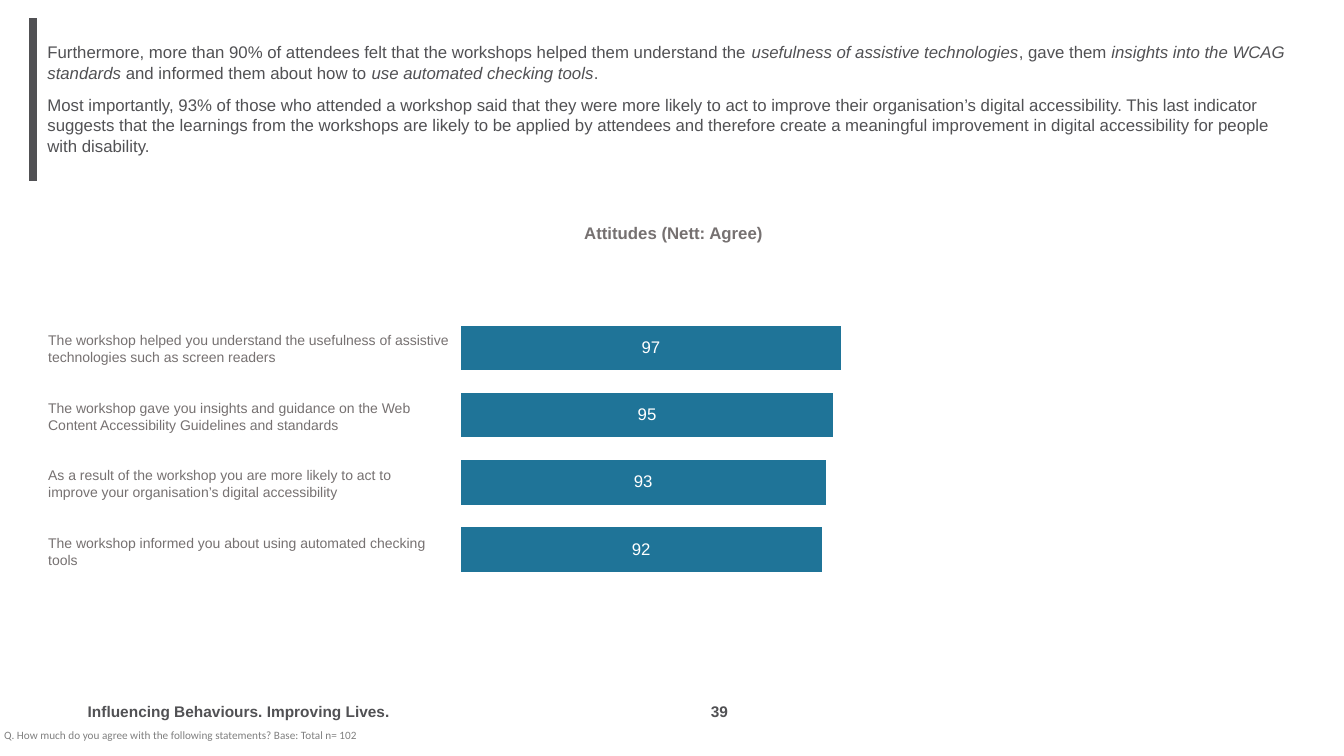
from lxml import etree
from pptx import Presentation
from pptx import util as u
from pptx.chart import data
from pptx.dml.color import RGBColor
from pptx.enum import chart as ch, text as tx
from pptx.oxml import parse_xml
from pptx.oxml.ns import nsdecls, qn

INK, GREY, BLUE = "515154", "767171", "1F7498"
INTRO = [
    "Furthermore, more than 90% of attendees felt that the workshops helped them understand the "
    "*usefulness of assistive technologies*, gave them *insights into the WCAG standards* and "
    "informed them about how to *use automated checking tools*.",
    "Most importantly, 93% of those who attended a workshop said that they were more likely to act "
    "to improve their organisation’s digital accessibility. This last indicator suggests that the "
    "learnings from the workshops are likely to be applied by attendees and therefore create a "
    "meaningful improvement in digital accessibility for people with disability.",
]
ROWS = [
    ("The workshop helped you understand the usefulness of assistive technologies such as "
     "screen readers", 97, 4.51),
    ("The workshop gave you insights and guidance on the Web Content Accessibility Guidelines "
     "and standards", 95, 4.06),
    ("As a result of the workshop you are more likely to act to improve your organisation’s "
     "digital accessibility", 93, 4.06),
    ("The workshop informed you about using automated checking tools", 92, 4.06),
]


def rgb(hue):
    """Turn a hex string into a colour."""
    return RGBColor.from_string(hue)


def put(obj, vals):
    """Set each attribute in a dict of values."""
    for key, val in vals.items():
        setattr(obj, key, val)


def style(font, size, hue, **more):
    """Set size, colour and other traits of a font."""
    put(font, {"name": "Arial", "size": u.Pt(size), **more})
    font.color.rgb = rgb(hue)


def place(shape, left, top, width, height):
    """Move and size a shape, in inches."""
    spots = zip(("left", "top", "width", "height"), (left, top, width, height))
    put(shape, {key: u.Inches(val) for key, val in spots})


def write(shape, lines, size, hue, form=None, inset=None, anchor=tx.MSO_ANCHOR.MIDDLE, **more):
    """Fill a shape with paragraphs; starred parts are italic."""
    frame = shape.text_frame
    put(frame, {"word_wrap": True, "auto_size": tx.MSO_AUTO_SIZE.NONE, "vertical_anchor": anchor})
    if inset is not None:
        sides = ("left", "top", "right", "bottom")
        put(frame, {f"margin_{side}": u.Inches(inset) for side in sides})
    for num, line in enumerate(lines):
        para = frame.add_paragraph() if num else frame.paragraphs[0]
        put(para, {"space_before": u.Pt(0), **(form or {})})
        for odd, part in enumerate(line.split("*")):
            run = para.add_run()
            run.text = part
            style(run.font, size, hue, italic=bool(odd % 2), **more)


def label(slide, box, line, size, hue, **more):
    """Add a text box with one paragraph."""
    shape = slide.shapes.add_textbox(*map(u.Inches, box))
    write(shape, [line], size, hue, **more)


def plain(shape):
    """Take the bullets and indents off a list."""
    for para in shape.text_frame.paragraphs:
        props = para._p.get_or_add_pPr()
        put(props, {"marL": 0, "indent": 0}) if hasattr(props, "marL") else None
        props.set("marL", "0")
        props.set("indent", "0")
        etree.SubElement(props, qn("a:buNone"))


def rule(slide, start, end, hue, width):
    """Draw a straight line."""
    line = slide.shapes.add_connector(1, *map(u.Inches, start + end))
    line.line.color.rgb = rgb(hue)
    line.line.width = u.Pt(width)
    etree.SubElement(line._element.spPr, qn("a:effectLst"))


def frame_plot(chart, **spot):
    """Fix the inner plot area as parts of the chart."""
    area = chart._chartSpace.chart.plotArea
    for old in area.findall(qn("c:layout")):
        area.remove(old)
    modes = '<c:xMode val="edge"/><c:yMode val="edge"/>'
    sizes = "".join(f'<c:{key} val="{val}"/>' for key, val in spot.items())
    area.insert(0, parse_xml(
        f'<c:layout {nsdecls("c")}><c:manualLayout><c:layoutTarget val="inner"/>'
        f"{modes}{sizes}</c:manualLayout></c:layout>"))


def bars(slide, box, vals):
    """Add the bar chart of agreement."""
    feed = data.CategoryChartData()
    feed.categories = [str(num + 1) for num in range(len(vals))]
    feed.add_series("Series 1", vals)
    kind = ch.XL_CHART_TYPE.BAR_STACKED
    chart = slide.shapes.add_chart(kind, *map(u.Inches, box), feed).chart
    put(chart, {"has_legend": False, "has_title": False})
    style(chart.font, 10, INK)
    put(chart.category_axis, {"reverse_order": True, "visible": False})
    put(chart.value_axis, {"minimum_scale": -100, "maximum_scale": 100,
                           "has_major_gridlines": False, "visible": False})
    plot = chart.plots[0]
    put(plot, {"gap_width": 50, "overlap": 100, "vary_by_categories": False})
    fill = plot.series[0].format.fill
    fill.solid()
    fill.fore_color.rgb = rgb(BLUE)
    tags = plot.series[0].data_labels
    put(tags, {"show_value": True, "position": ch.XL_LABEL_POSITION.CENTER})
    style(tags.font, 12, "FFFFFF")
    frame_plot(chart, x=0.002, y=0.098, w=0.946, h=0.79)


def main():
    """Build the slide and save it."""
    deck = Presentation()
    put(deck, {"slide_width": u.Inches(13.33), "slide_height": u.Inches(7.5)})
    slide = deck.slides.add_slide(deck.slide_layouts[1])
    title, intro = slide.placeholders
    mid = {"alignment": tx.PP_ALIGN.CENTER}

    place(title, 3.98, 2.08, 5.4, 0.46)
    write(title, ["Attitudes (Nett: Agree)"], 12, GREY, form=mid, bold=True)
    place(intro, 0.37, 0.22, 12.62, 1.52)
    write(intro, INTRO, 12, INK, form={"space_after": u.Pt(9)})
    plain(intro)
    rule(slide, (0.33, 0.18), (0.33, 1.8), INK, 6)

    bars(slide, (0.66, 2.79, 8.23, 3.37), [val for _, val, _ in ROWS])
    for num, (line, _, width) in enumerate(ROWS):
        label(slide, (0.38, 3.31 + 0.67 * num, width, 0.3), line, 10, GREY)

    label(slide, (0.83, 6.89, 3.95, 0.3), "Influencing Behaviours. Improving Lives.", 11, INK,
          form={"line_spacing": 1.2}, inset=0.04, bold=True)
    label(slide, (6.84, 6.89, 0.59, 0.3), "39", 11, INK,
          form={"line_spacing": 1.2, **mid}, inset=0.04, bold=True)
    label(slide, (0, 7.19, 11.94, 0.3),
          "Q. How much do you agree with the following statements? Base: Total n= 102", 8, "808080",
          form={"line_spacing": u.Pt(9)}, inset=0.04, anchor=tx.MSO_ANCHOR.TOP, name="Calibri")
    deck.save("out.pptx")


if __name__ == "__main__":
    main()
